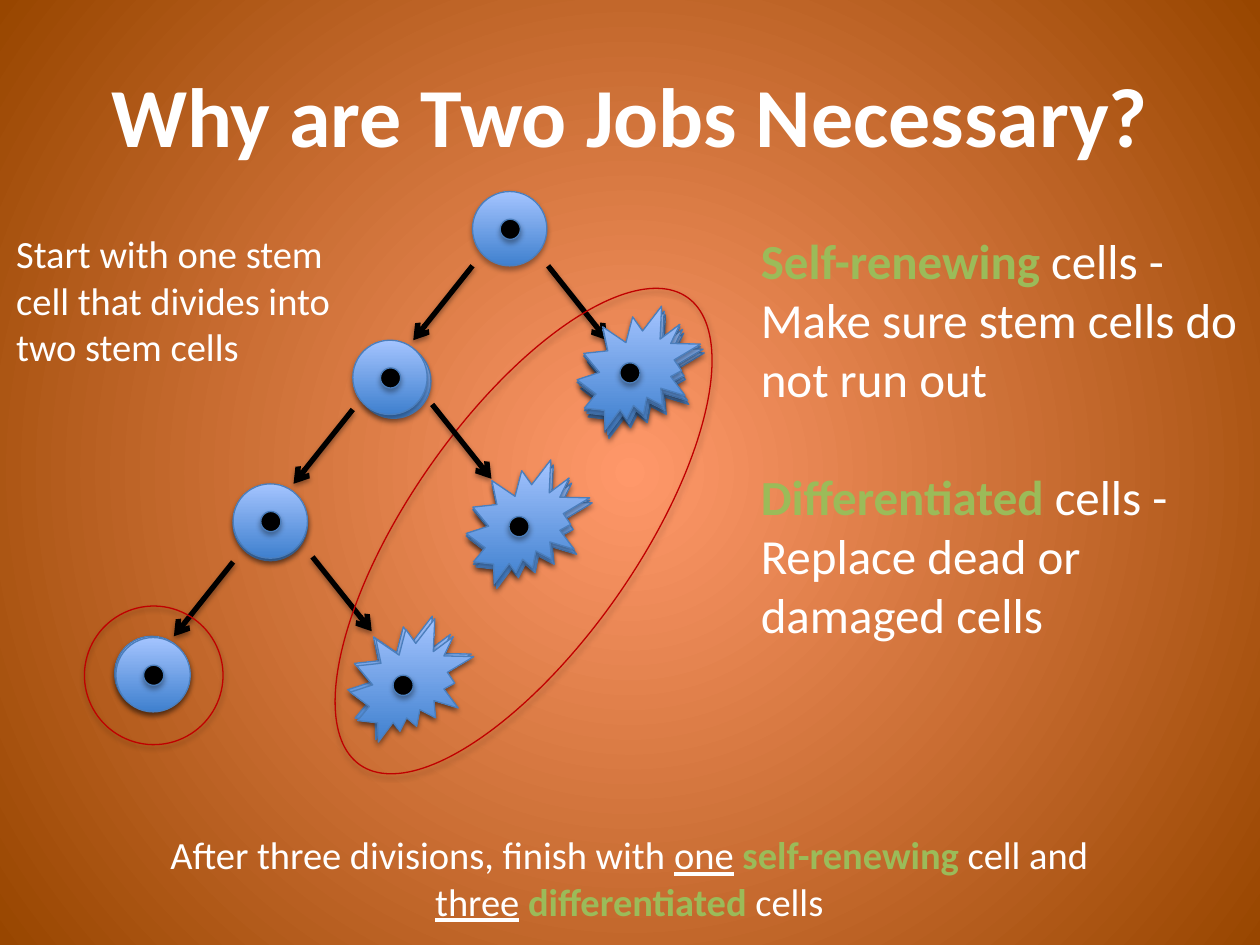
from pptx import Presentation
from pptx.dml.color import RGBColor
from pptx.enum.shapes import MSO_CONNECTOR, MSO_SHAPE
from pptx.enum.text import MSO_ANCHOR, MSO_AUTO_SIZE, PP_ALIGN
from pptx.oxml import parse_xml
from pptx.oxml.ns import nsdecls
from pptx.util import Pt

PX = 9144  # EMU, 100 px to the inch
OVAL, SPIKY = MSO_SHAPE.OVAL, MSO_SHAPE.EXPLOSION2
LEFT, CENTER = PP_ALIGN.LEFT, PP_ALIGN.CENTER
WHITE, GREEN, BLUE, BLACK, RED = "FFFFFF", "9BBB59", "4F81BD", "000000", "C00000"
CELL_EDGE, CELL_DARK, CELL_LIGHT = "4B7EBC", "3F80CE", "A4C4FF"
GLOW, RUST = "FF986A", "984600"
rgb = RGBColor.from_string


def add_shadow(part, opacity, distance):
    part._element.spPr.append(parse_xml(
        f'<a:effectLst {nsdecls("a")}><a:outerShdw blurRad="{Pt(3.1)}" dist="{Pt(distance)}" '
        f'dir="5400000" rotWithShape="0"><a:srgbClr val="{BLACK}">'
        f'<a:alpha val="{opacity * 1000}"/></a:srgbClr></a:outerShdw></a:effectLst>'))


def add_runs(paragraph, size, runs):
    """Each run is (text, style): plain, under, bold or key (green, outlined)."""
    for text, style in runs:
        run = paragraph.add_run()
        run.text = text
        run.font.name = "Calibri"
        run.font.size = Pt(size)
        run.font.bold = style in ("bold", "key")
        run.font.underline = style == "under"
        run.font.color.rgb = rgb(GREEN if style == "key" else WHITE)
        if style == "key":
            run.font._element.insert(0, parse_xml(
                f'<a:ln {nsdecls("a")} w="{Pt(0.75)}"><a:solidFill>'
                f'<a:srgbClr val="{BLUE}"/></a:solidFill></a:ln>'))


prs = Presentation()
prs.slide_width, prs.slide_height = 1000 * PX, 750 * PX
slide = prs.slides.add_slide(prs.slide_layouts[5])

# Background: glow in the middle, darker towards the corners
backdrop = slide.background.fill
backdrop.gradient()
for stop, color in zip(backdrop.gradient_stops, (GLOW, RUST)):
    stop.color.rgb = rgb(color)
direction = slide._element.xpath(".//p:bg//a:lin")[0]
direction.getparent().replace(direction, parse_xml(
    f'<a:path {nsdecls("a")} path="circle">'
    '<a:fillToRect l="50000" t="50000" r="50000" b="50000"/></a:path>'))

# Title
title = slide.shapes.title
title.left, title.top, title.width, title.height = 0, 52 * PX, 1000 * PX, 77 * PX
title.text_frame.vertical_anchor = MSO_ANCHOR.MIDDLE
heading = title.text_frame.paragraphs[0]
heading.alignment = CENTER
add_runs(heading, 48, [("Why are Two Jobs Necessary?", "bold")])

# Explanations: left, top, width, height, size, alignment, gap before, paragraphs
explanations = [
    (3, 178, 308, 121, 22, LEFT, 0, [
        [("Start with one stem cell that divides into two stem cells", "plain")]]),
    (11, 655, 977, 84, 22, CENTER, 0, [
        [("After three divisions, finish with ", "plain"), ("one", "under"), (" ", "bold"),
         ("self-renewing ", "key"), ("cell and", "plain")],
        [("three", "under"), (" ", "plain"), ("differentiated ", "key"), ("cells", "plain")]]),
    (594, 178, 406, 377, 28, LEFT, 34, [
        [("Self-renewing", "key"), (" cells - Make sure stem cells do not run out", "plain")],
        [("Differentiated ", "key"), ("cells - Replace dead or damaged cells", "plain")]]),
]
for left, top, width, height, size, alignment, gap, paragraphs in explanations:
    box = slide.shapes.add_textbox(left * PX, top * PX, width * PX, height * PX)
    frame = box.text_frame
    frame.word_wrap = True
    frame.auto_size = MSO_AUTO_SIZE.SHAPE_TO_FIT_TEXT
    for index, runs in enumerate(paragraphs):
        paragraph = frame.paragraphs[0] if index == 0 else frame.add_paragraph()
        paragraph.alignment = alignment
        if index:
            paragraph.space_before = Pt(gap)
        add_runs(paragraph, size, runs)

# Division stages, back to front; each is one group
# stem and special: left, top; arrow: start and sideways step; ring: left, top, width, height
stages = [
    [("stem", 375, 152), ("special", 461, 250), ("arrow", 375, 211, -47),
     ("arrow", 435, 211, 47), ("stem", 283, 273)],
    [("special", 458, 245), ("stem", 185, 386), ("special", 370, 367),
     ("arrow", 185, 446, -47), ("stem", 91, 505), ("arrow", 248, 442, 47),
     ("special", 276, 489)],
    [("special", 460, 247), ("special", 372, 369), ("stem", 92, 506),
     ("special", 278, 491), ("ring", 325, 195, 181, 453), ("ring", 67, 481, 110, 110)],
    [("special", 458, 243), ("arrow", 280, 325, -47), ("stem", 185, 384),
     ("arrow", 343, 321, 47), ("special", 370, 365), ("stem", 280, 270)],
]
for stage in stages:
    group = slide.shapes.add_group_shape()
    for kind, x, y, *extent in stage:
        if kind == "arrow":
            arrow = group.shapes.add_connector(
                MSO_CONNECTOR.STRAIGHT, x * PX, y * PX, (x + extent[0]) * PX, (y + 59) * PX)
            arrow.line.width = Pt(3)
            arrow.line.color.rgb = rgb(BLACK)
            arrow.line._get_or_add_ln().append(
                parse_xml(f'<a:tailEnd {nsdecls("a")} type="arrow"/>'))
            add_shadow(arrow, 38, 1.6)
            continue

        # A cell is a body with a nucleus, a ring is one open outline
        if kind == "ring":
            parts = [("ring", OVAL, x, y, *extent)]
        elif kind == "stem":
            parts = [("body", OVAL, x, y, 59, 59), ("nucleus", OVAL, x + 22, y + 22, 16, 16)]
        else:
            parts = [("body", SPIKY, x, y, 98, 98), ("nucleus", OVAL, x + 34, y + 45, 16, 16)]
        for role, preset, left, top, width, height in parts:
            part = group.shapes.add_shape(preset, left * PX, top * PX, width * PX, height * PX)
            if role == "ring":
                part.rotation = 35
                part.fill.background()
            elif role == "nucleus":
                part.fill.solid()
                part.fill.fore_color.rgb = rgb(BLACK)
            else:
                part.fill.gradient()
                part.fill.gradient_angle = 90
                for stop, color in zip(part.fill.gradient_stops, (CELL_DARK, CELL_LIGHT)):
                    stop.color.rgb = rgb(color)
            part.line.width = Pt(0.75)
            part.line.color.rgb = rgb(RED if role == "ring" else CELL_EDGE)
            add_shadow(part, 35, 1.8)

prs.save("out.pptx")
